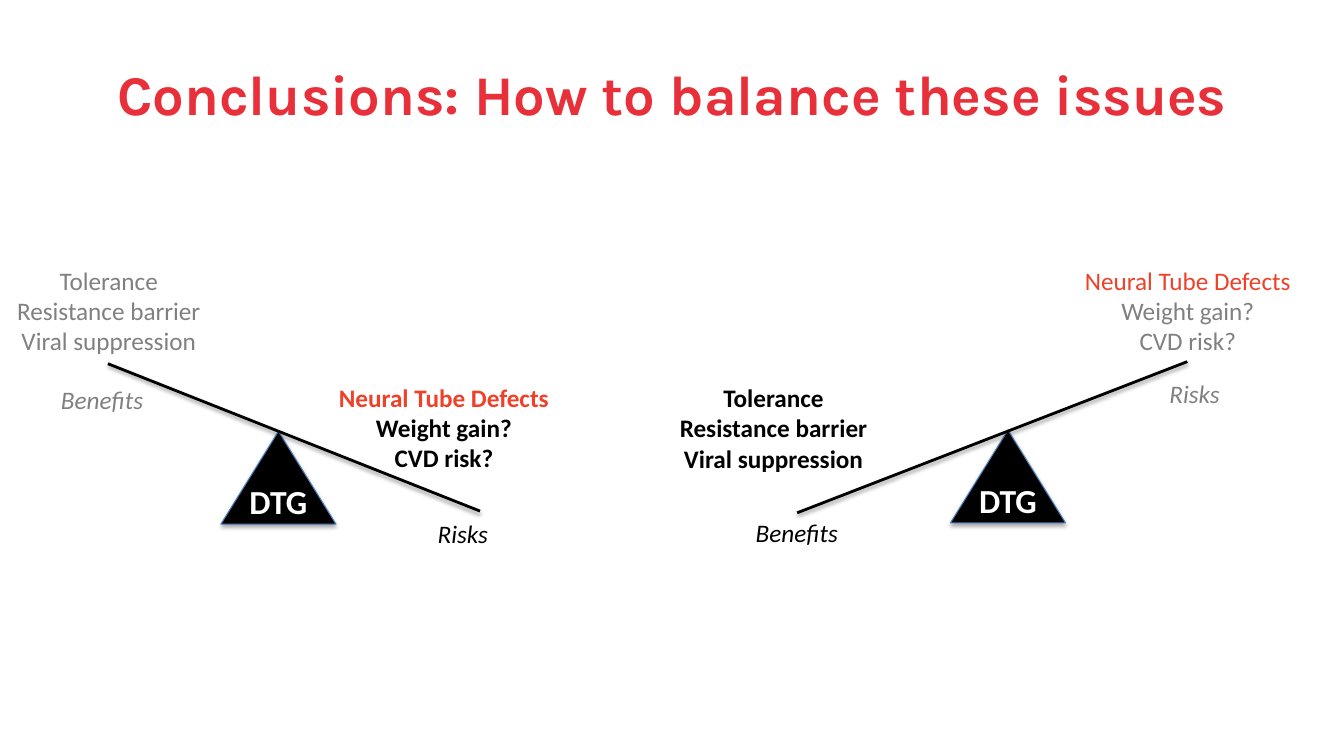
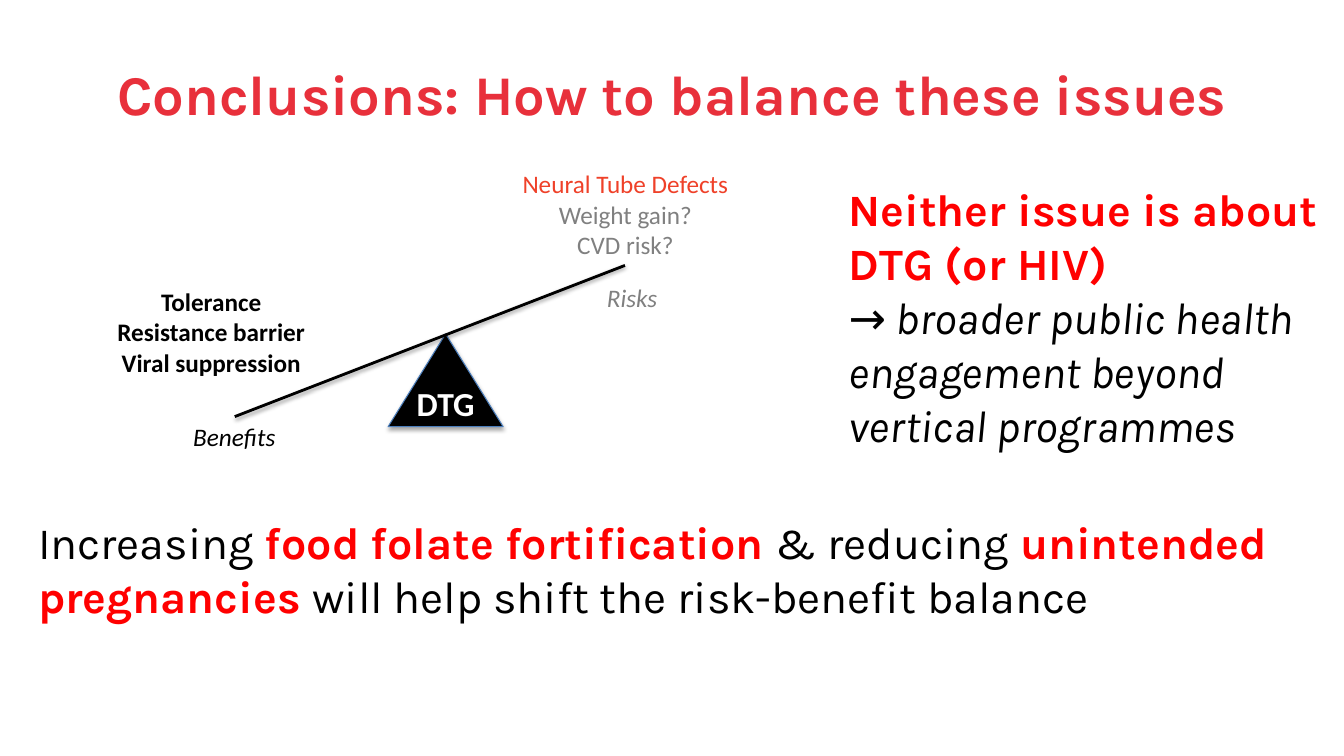
import dataclasses

import lxml.etree
import pptx
import pptx.dml.color
import pptx.enum.shapes
import pptx.enum.text
import pptx.oxml.ns
import pptx.util

COLORS = {
    "title": "E8303B",
    "black": "000000",
    "white": "FFFFFF",
    "faded": "808080",
    "alarm": "EF4129",
    "emphasis": "FF0000",
    "outline": "4B7EBC",
}
COLUMNS, ROWS = 32, 18
ALIGN = pptx.enum.text.PP_ALIGN
ANCHOR = pptx.enum.text.MSO_ANCHOR

TITLE = "Conclusions: How to balance these issues"
ITEMS = {
    "Benefits": ["Tolerance", "Resistance barrier", "Viral suppression"],
    "Risks": ["Neural Tube Defects", "Weight gain?", "CVD risk?"],
}
ALARMING_ITEM = "Neural Tube Defects"
LIST_WIDTHS = {"Benefits": 5, "Risks": 5.7}
LABEL_WIDTH = 2.5


@dataclasses.dataclass
class Side:
    """One arm of a seesaw; points are (column, row) offsets from the pivot.

    The list and the label are placed by the middle of their top edge.
    """
    name: str
    heavy: bool
    beam_end: tuple
    list_top: tuple
    label_top: tuple


BENEFITS_HEAVY = (
    Side("Benefits", True, (-5.02, 1.97), (-5.58, -1.25), (-5.03, 1.97)),
    Side("Risks", False, (4.27, -1.63), (4.28, -4.05), (4.44, -1.34)),
)
RISKS_HEAVY = (
    Side("Benefits", False, (-4.06, -1.61), (-4.04, -4.08), (-4.2, -1.24)),
    Side("Risks", True, (4.8, 1.9), (3.94, -1.29), (4.39, 1.95)),
)


def rgb(name):
    return pptx.dml.color.RGBColor.from_string(COLORS[name])


def write(frame, paragraphs, align=ALIGN.LEFT, anchor=ANCHOR.TOP, wrap=True, **style):
    """Fill a frame; each paragraph is a list of (text, style overrides) runs."""
    frame.word_wrap = wrap
    frame.vertical_anchor = anchor
    for index, runs in enumerate(paragraphs):
        paragraph = frame.add_paragraph() if index else frame.paragraphs[0]
        paragraph.alignment = align
        for text, overrides in runs:
            look = {"bold": False, "italic": False, "color": "black", **style, **overrides}
            run = paragraph.add_run()
            run.text = text
            run.font.name = look["font"]
            run.font.size = pptx.util.Pt(look["size"])
            run.font.bold = look["bold"]
            run.font.italic = look["italic"]
            run.font.color.rgb = rgb(look["color"])


def add_shadow(shape, opacity, distance):
    """Give a shape or connector a soft black shadow straight below it."""
    def child(parent, tag, **attributes):
        return lxml.etree.SubElement(parent, pptx.oxml.ns.qn(tag), **attributes)

    effects = child(shape._element.spPr, "a:effectLst")
    shadow = child(effects, "a:outerShdw", blurRad=str(pptx.util.Pt(3.1)),
                   dist=str(pptx.util.Pt(distance)), dir="5400000", rotWithShape="0")
    color = child(shadow, "a:srgbClr", val=COLORS["black"])
    child(color, "a:alpha", val=str(opacity * 1000))


class Deck:
    """Holds the presentation and the current slide; lengths are columns and rows."""

    def __init__(self):
        self.presentation = pptx.Presentation()
        self.presentation.slide_width = pptx.util.Inches(13.33)
        self.presentation.slide_height = pptx.util.Inches(7.5)
        self.slide = None

    def grid(self, *lengths):
        """Turn alternating columns and rows into slide units."""
        units = (self.presentation.slide_width / COLUMNS,
                 self.presentation.slide_height / ROWS)
        return [round(length * units[index % 2]) for index, length in enumerate(lengths)]

    def add_slide(self):
        blank = self.presentation.slide_layouts[6]
        self.slide = self.presentation.slides.add_slide(blank)
        self.text(1.97, 0.72, 28.06, 3, [[(TITLE, {})]], size=40, bold=True,
                  color="title", align=ALIGN.CENTER, anchor=ANCHOR.MIDDLE)

    def text(self, left, top, width, height, paragraphs, font="Karla", size=32, **style):
        box = self.slide.shapes.add_textbox(*self.grid(left, top, width, height))
        write(box.text_frame, paragraphs, font=font, size=size, **style)

    def pivot(self, column, row):
        width, height = 2.74, 2.21
        triangle = self.slide.shapes.add_shape(
            pptx.enum.shapes.MSO_SHAPE.ISOSCELES_TRIANGLE,
            *self.grid(column - width / 2, row, width, height))
        triangle.fill.solid()
        triangle.fill.fore_color.rgb = rgb("black")
        triangle.line.color.rgb = rgb("outline")
        triangle.line.width = pptx.util.Pt(0.75)
        add_shadow(triangle, opacity=35, distance=1.8)
        write(triangle.text_frame, [[("DTG", {})]], align=ALIGN.CENTER,
              anchor=ANCHOR.MIDDLE, wrap=False, font="Calibri", size=24,
              bold=True, color="white")

    def beam(self, *ends):
        line = self.slide.shapes.add_connector(
            pptx.enum.shapes.MSO_CONNECTOR.STRAIGHT, *self.grid(*ends))
        line.line.color.rgb = rgb("black")
        line.line.width = pptx.util.Pt(2)
        add_shadow(line, opacity=38, distance=1.6)

    def caption(self, center, top, width, height, paragraphs, **style):
        self.text(center - width / 2, top, width, height, paragraphs, font="Calibri",
                  size=18, align=ALIGN.CENTER, wrap=False, **style)

    def seesaw(self, column, row, sides):
        """Draw a balance whose pivot has its tip at the given column and row."""
        def place(offset):
            return column + offset[0], row + offset[1]

        self.pivot(column, row)
        left, right = sides
        self.beam(*place(left.beam_end), *place(right.beam_end))
        for side in sides:
            color = "black" if side.heavy else "faded"
            items = [[(item, {"color": "alarm"} if item == ALARMING_ITEM else {})]
                     for item in ITEMS[side.name]]
            self.caption(*place(side.list_top), LIST_WIDTHS[side.name], 2.42, items,
                         bold=side.heavy, color=color)
            self.caption(*place(side.label_top), LABEL_WIDTH, 0.96, [[(side.name, {})]],
                         italic=True, color=color)


def main():
    deck = Deck()
    emphasis = {"bold": True, "color": "emphasis"}

    deck.add_slide()
    deck.seesaw(6.63, 10.27, RISKS_HEAVY)
    deck.seesaw(24, 10.24, BENEFITS_HEAVY)

    deck.add_slide()
    deck.seesaw(10.61, 7.95, BENEFITS_HEAVY)
    deck.text(19.97, 4.22, 11.69, 6.7, [
        [("Neither issue is about DTG (or HIV)", emphasis)],
        [("→ broader public health engagement beyond vertical programmes",
          {"italic": True})],
    ])
    deck.text(0.67, 12.13, 30.98, 2.83, [[
        ("Increasing ", {}),
        ("food folate fortification ", emphasis),
        ("& reducing ", {}),
        ("unintended pregnancies ", emphasis),
        ("will help shift the risk-benefit balance", {}),
    ]])

    deck.presentation.save("out.pptx")


if __name__ == "__main__":
    main()
